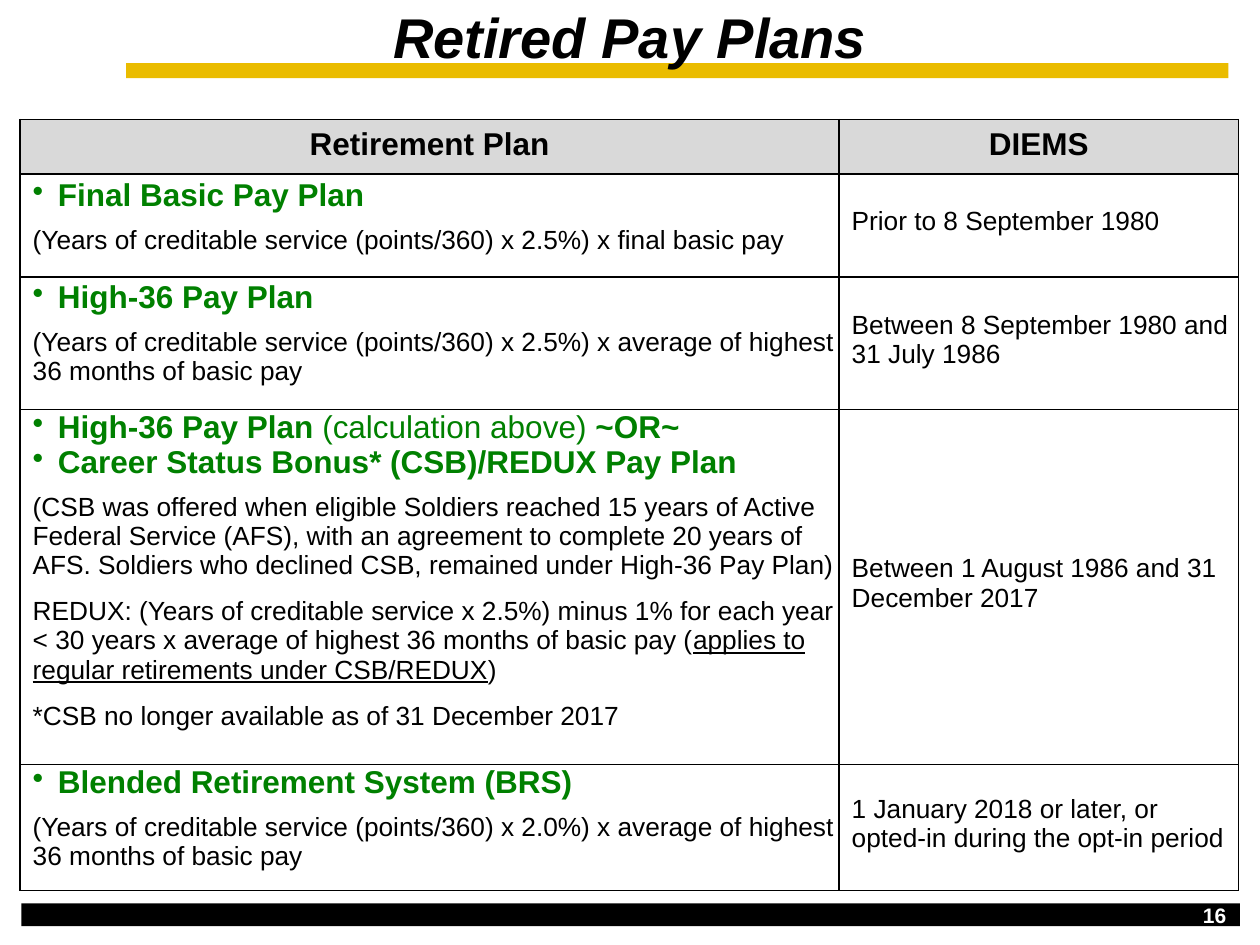
import pptx
import pptx.dml.color
import pptx.enum.shapes
import pptx.enum.text
import pptx.oxml
import pptx.oxml.ns
import pptx.util
from pptx.util import Inches

RGBColor = pptx.dml.color.RGBColor
BLACK = RGBColor(0x00, 0x00, 0x00)
WHITE = RGBColor(0xFF, 0xFF, 0xFF)
GOLD = RGBColor(0xEA, 0xBC, 0x00)
GREEN = RGBColor(0x00, 0x80, 0x00)
GRAY = RGBColor(0xD9, 0xD9, 0xD9)

ALIGN = pptx.enum.text.PP_ALIGN
ANCHOR = pptx.enum.text.MSO_ANCHOR

# Character formats, by role
FORMATS = {
    "title": {"size": 32, "bold": True, "italic": True, "color": BLACK},
    "heading": {"size": 18, "bold": True, "color": BLACK},
    "plan": {"size": 18, "bold": True, "color": GREEN},
    "plan note": {"size": 18, "bold": False, "color": GREEN},
    "body": {"size": 15, "bold": False, "color": BLACK},
    "underlined": {"size": 15, "bold": False, "underline": True, "color": BLACK},
    "page": {"size": 12, "bold": True, "color": WHITE},
}


def plan(*runs):
    """A bulleted plan name."""
    return {"runs": runs, "bullet": True}


def detail(*runs, before=7.3):
    """An explanation below a plan name."""
    return {"runs": runs, "before": before}


def formula(rate, base):
    return detail((f"(Years of creditable service (points/360) x {rate}) x {base}", "body"))


HIGH_36_BASE = "average of highest 36 months of basic pay"

# Row height, top margin, plan text, DIEMS
PLANS = [
    (0.82, 0.03,
     [plan(("Final Basic Pay Plan", "plan")), formula("2.5%", "final basic pay")],
     "Prior to 8 September 1980"),
    (1.05, 0.02,
     [plan(("High-36 Pay Plan", "plan")), formula("2.5%", HIGH_36_BASE)],
     "Between 8 September 1980 and 31 July 1986"),
    (2.82, 0,
     [plan(("High-36 Pay Plan ", "plan"), ("(calculation above) ", "plan note"),
           ("~OR~", "plan")),
      plan(("Career Status Bonus* (CSB)/REDUX Pay Plan", "plan")),
      detail(("(CSB was offered when eligible Soldiers reached 15 years of Active "
              "Federal Service (AFS), with an agreement to complete 20 years of AFS. "
              "Soldiers who declined CSB, remained under High-36 Pay Plan)", "body")),
      detail(("REDUX: (Years of creditable service x 2.5%) minus 1% for each year "
              f"< 30 years x {HIGH_36_BASE} (", "body"),
             ("applies to regular retirements under CSB/REDUX", "underlined"),
             (")", "body"), before=9.6),
      detail(("*CSB no longer available as of 31 December 2017", "body"), before=9.6)],
     "Between 1 August 1986 and 31 December 2017"),
    (1.0, 0,
     [plan(("Blended Retirement System (BRS)", "plan")), formula("2.0%", HIGH_36_BASE)],
     "1 January 2018 or later, or opted-in during the opt-in period"),
]


class SlideBuilder:
    def __init__(self, slide, font_name="Arial"):
        self.slide = slide
        self.font_name = font_name

    def bar(self, left, top, width, height, color):
        bar = self.slide.shapes.add_shape(
            pptx.enum.shapes.MSO_SHAPE.RECTANGLE,
            Inches(left), Inches(top), Inches(width), Inches(height))
        bar.shadow.inherit = False
        bar.fill.solid()
        bar.fill.fore_color.rgb = color
        bar.line.fill.background()

    def run(self, paragraph, text, role):
        run = paragraph.add_run()
        run.text = text
        run.font.name = self.font_name
        for name, value in FORMATS[role].items():
            if name == "color":
                run.font.color.rgb = value
            else:
                setattr(run.font, name, pptx.util.Pt(value) if name == "size" else value)

    def label(self, left, top, width, height, text, role, top_margin=0):
        box = self.slide.shapes.add_textbox(
            Inches(left), Inches(top), Inches(width), Inches(height))
        frame = box.text_frame
        frame.word_wrap = True
        self.margins(frame, top=top_margin)
        frame.paragraphs[0].alignment = ALIGN.CENTER
        self.run(frame.paragraphs[0], text, role)

    def margins(self, target, **inches):
        for side in ("left", "top", "right", "bottom"):
            setattr(target, f"margin_{side}", Inches(inches.get(side, 0)))

    def bullet(self, paragraph):
        properties = paragraph._p.get_or_add_pPr()
        properties.set("marL", str(Inches(0.2)))
        properties.set("indent", str(Inches(-0.2)))
        properties.append(pptx.oxml.parse_xml(
            f'<a:buChar {pptx.oxml.ns.nsdecls("a")} char="•"/>'))

    def borders(self, cell):
        properties = cell._tc.get_or_add_tcPr()
        for position, side in enumerate(("lnL", "lnR", "lnT", "lnB")):
            properties.insert(position, pptx.oxml.parse_xml(
                f'<a:{side} {pptx.oxml.ns.nsdecls("a")} w="{pptx.util.Pt(1)}">'
                f'<a:solidFill><a:srgbClr val="{BLACK}"/></a:solidFill></a:{side}>'))

    def table(self, left, top, widths, heights):
        table = self.slide.shapes.add_table(
            len(heights), len(widths), Inches(left), Inches(top),
            Inches(sum(widths)), Inches(sum(heights))).table
        table.first_row = table.horz_banding = False
        for column, width in zip(table.columns, widths):
            column.width = Inches(width)
        for row, height in zip(table.rows, heights):
            row.height = Inches(height)
        return table

    def cell(self, cell, paragraphs, fill=WHITE, align=ALIGN.LEFT,
             anchor=ANCHOR.MIDDLE, **margins):
        self.margins(cell, **margins)
        cell.vertical_anchor = anchor
        cell.fill.solid()
        cell.fill.fore_color.rgb = fill
        self.borders(cell)
        frame = cell.text_frame
        for index, content in enumerate(paragraphs):
            paragraph = frame.add_paragraph() if index else frame.paragraphs[0]
            paragraph.alignment = align
            if content.get("bullet"):
                self.bullet(paragraph)
            if "before" in content:
                paragraph.space_before = pptx.util.Pt(content["before"])
            for text, role in content["runs"]:
                self.run(paragraph, text, role)


def main():
    deck = pptx.Presentation()
    deck.slide_width, deck.slide_height = Inches(10), Inches(7.5)
    builder = SlideBuilder(deck.slides.add_slide(deck.slide_layouts[6]))

    # Rules above and below the content
    builder.bar(1, 0.5, 8.75, 0.12, GOLD)
    builder.bar(0.17, 7.17, 9.67, 0.18, BLACK)

    # Table of retirement plans
    plans = builder.table(0.16, 0.95, (6.5, 3.17), [0.43] + [row[0] for row in PLANS])
    for column, heading in enumerate(("Retirement Plan", "DIEMS")):
        builder.cell(plans.cell(0, column), [{"runs": [(heading, "heading")]}],
                     fill=GRAY, align=ALIGN.CENTER, bottom=0.03)
    for row, (_, top_margin, description, diems) in enumerate(PLANS, start=1):
        builder.cell(plans.cell(row, 0), description, anchor=ANCHOR.TOP,
                     left=0.1, top=top_margin)
        builder.cell(plans.cell(row, 1), [{"runs": [(diems, "body")]}],
                     left=0.1, right=0.04, bottom=0.06)

    # Title and page number
    builder.label(3, 0.01, 4, 0.56, "Retired Pay Plans", "title", top_margin=0.01)
    builder.label(9.5, 7.16, 0.28, 0.22, "16", "page")

    deck.save("out.pptx")


if __name__ == "__main__":
    main()
